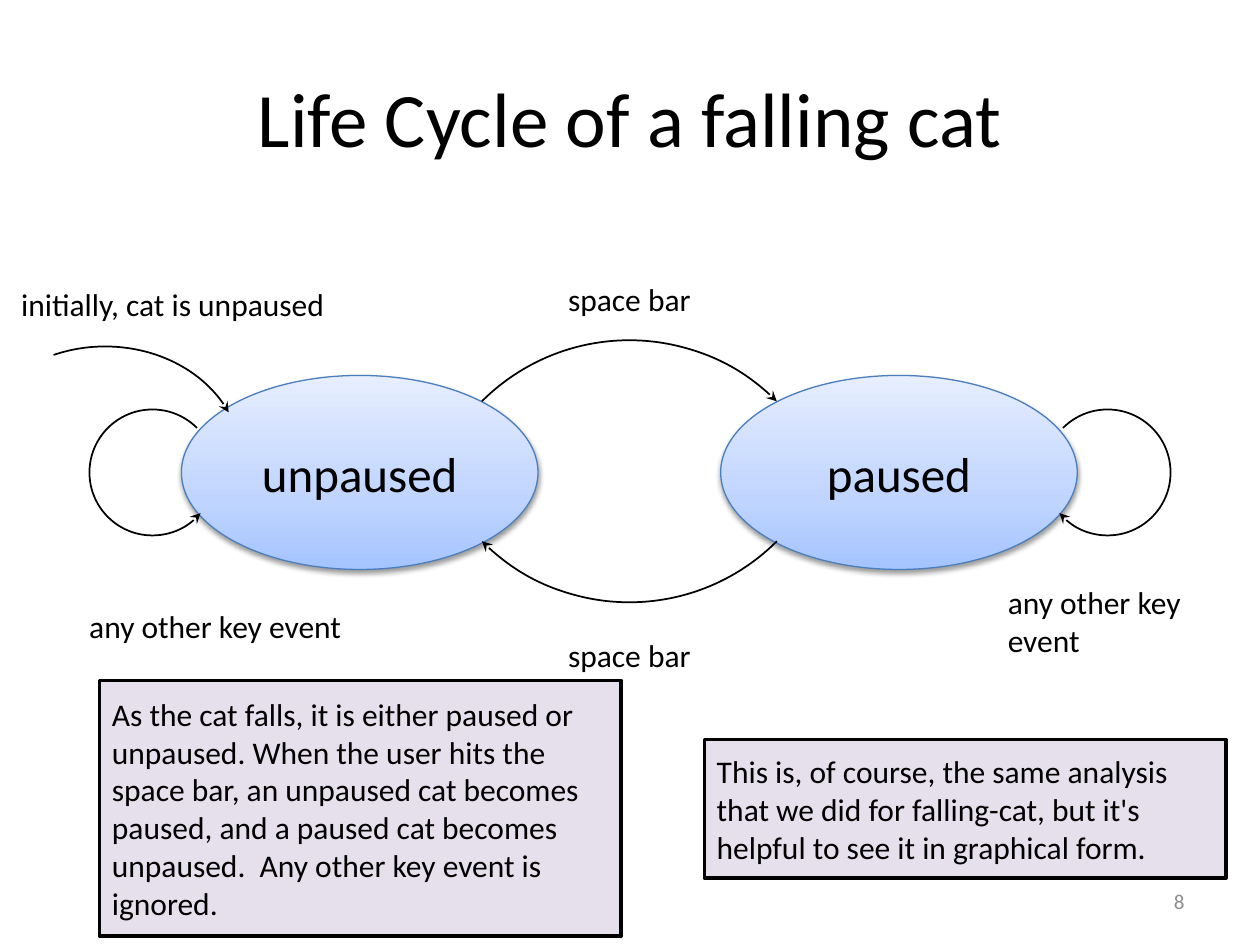
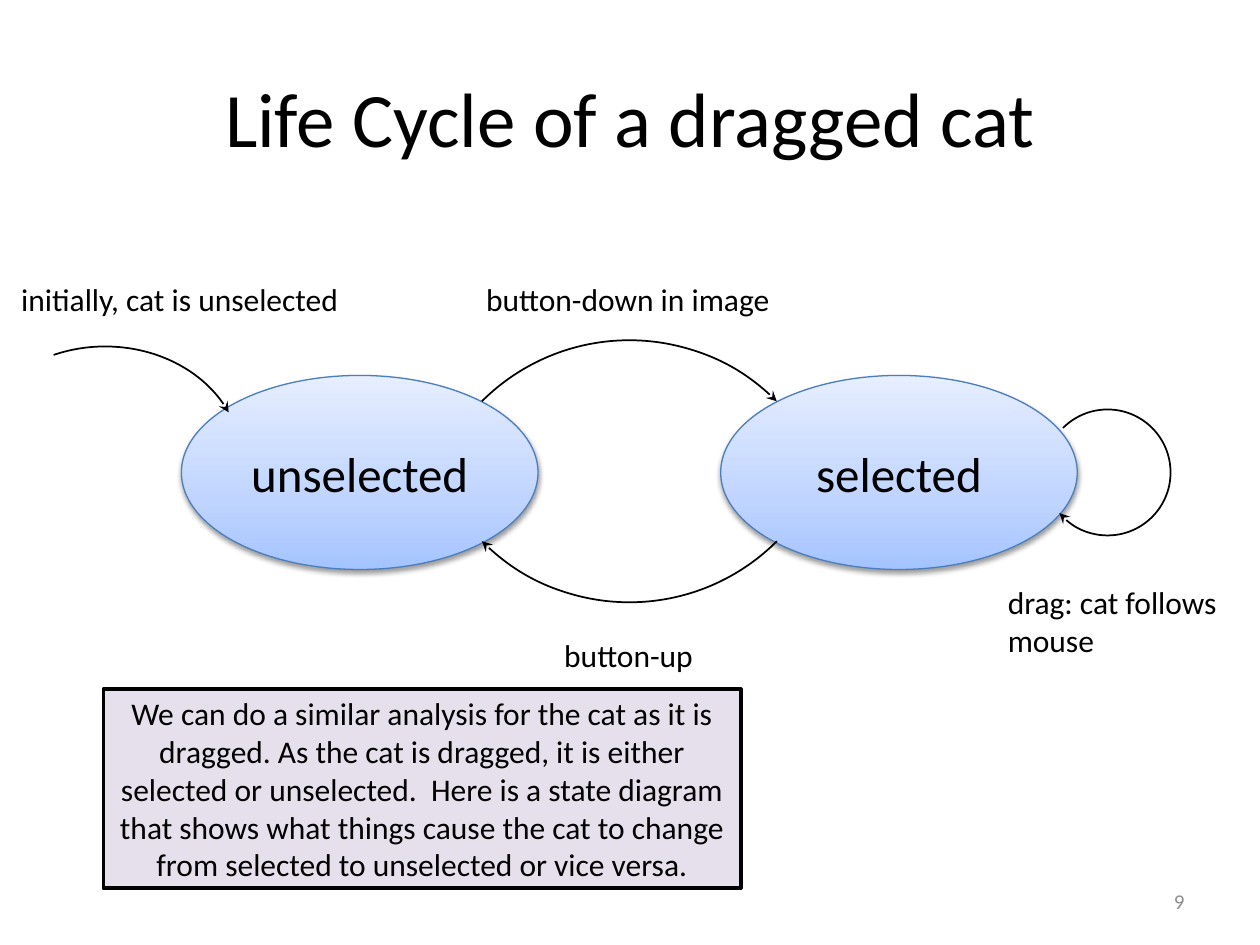
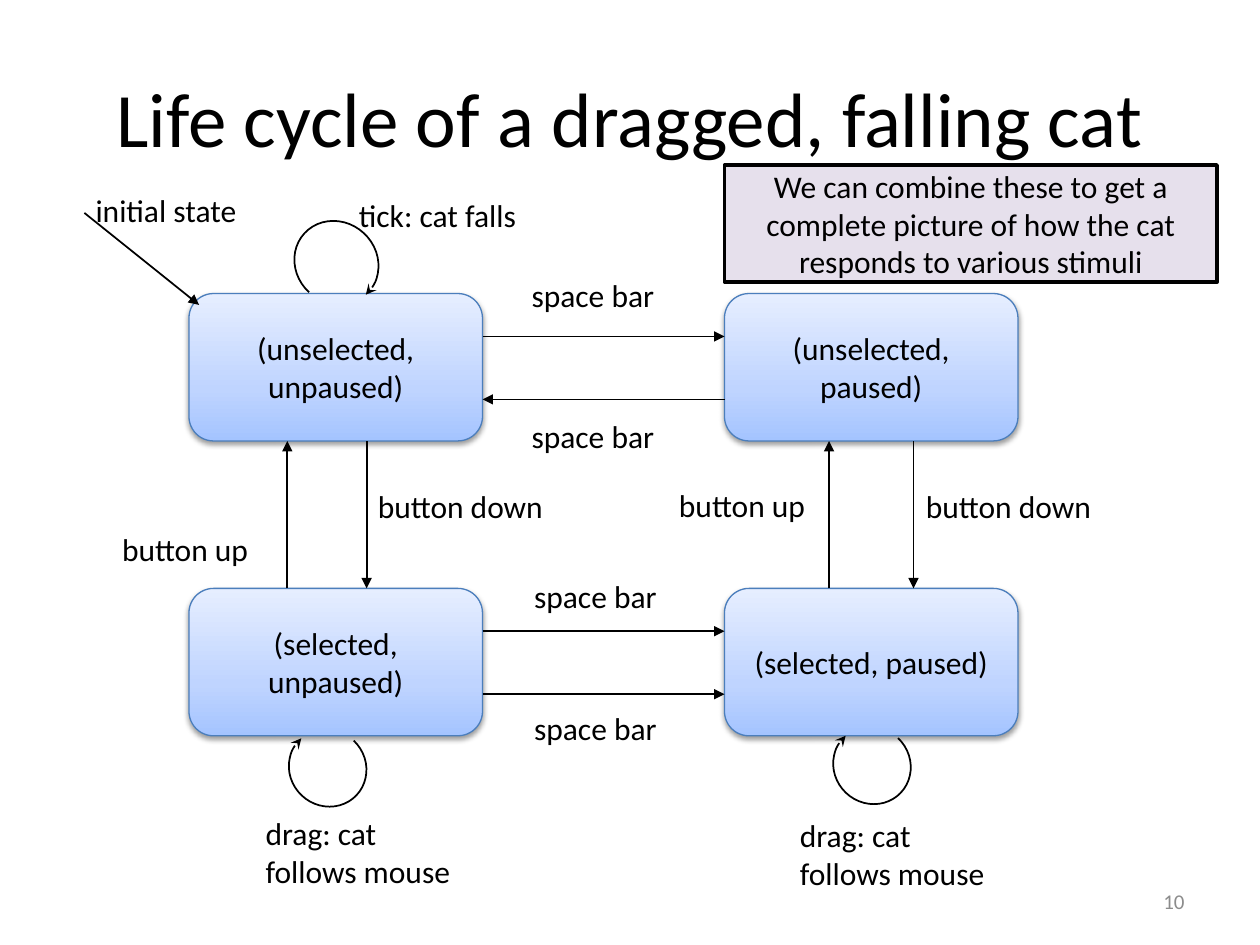
"""Build three slides of state diagrams for a falling and dragged cat."""
from copy import deepcopy

from lxml import etree
from pptx import Presentation
from pptx.dml.color import RGBColor
from pptx.enum.shapes import MSO_CONNECTOR, MSO_SHAPE
from pptx.enum.text import MSO_ANCHOR, PP_ALIGN
from pptx.oxml.ns import qn
from pptx.util import Inches, Pt

LEFT, CENTER, RIGHT = PP_ALIGN.LEFT, PP_ALIGN.CENTER, PP_ALIGN.RIGHT
TOP, MIDDLE = MSO_ANCHOR.TOP, MSO_ANCHOR.MIDDLE
ELLIPSE, ROUNDED = MSO_SHAPE.OVAL, MSO_SHAPE.ROUNDED_RECTANGLE
RECTANGLE, ARC = MSO_SHAPE.RECTANGLE, MSO_SHAPE.ARC
STRAIGHT = MSO_CONNECTOR.STRAIGHT

FONT = "Calibri"
COLORS = {"text": "000000", "number": "8C8C8C", "note": "E6E0EC", "state_line": "4B7EBC"}
STATE_STOPS = [(0, "A4C4FF"), (0.35, "BFD4FF"), (1, "E6EEFF")]
TITLE_AREA = (0.5, 0.3, 9, 1.25)
NUMBER_AREA = (7.17, 6.95, 2.33, 0.4)
LABEL_HEIGHT = 0.4

ENTRY_SWEEP = (244.25, 338.2)
QUARTER_SWEEP = (270, 0)
LOOP_SWEEP = (180, 94.76)

ELLIPSE_AREAS = [(1.44, 2.98, 2.83, 1.54), (5.72, 2.98, 2.83, 1.54)]
CYCLE_ARCS = [
    ((-0.25, 2.75, 2.17, 1.83), ENTRY_SWEEP, 0, False),
    ((3.34, 2.7, 3.31, 3.31), QUARTER_SWEEP, 315, False),
    ((3.34, 1.47, 3.31, 3.31), QUARTER_SWEEP, 135, False),
    ((8.29, 3.25, 1, 1), LOOP_SWEEP, 45, False),
]
LEFT_LOOP = ((0.71, 3.25, 1, 1), LOOP_SWEEP, 315, True)

GRID_LEFTS, GRID_TOPS = (1.5, 5.75), (2.33, 4.67)
GRID_WIDTH, GRID_HEIGHT = 2.33, 1.17
GRID_STATES = [
    ["(unselected, unpaused)", "(unselected, paused)"],
    ["(selected, unpaused)", "(selected, paused)"],
]
GRID_ARCS = [
    ((2.35, 1.74, 0.64, 0.69), LOOP_SWEEP, 312.7, False),
    ((2.3, 5.78, 0.6, 0.63), LOOP_SWEEP, 133.6, False),
    ((6.62, 5.76, 0.6, 0.63), LOOP_SWEEP, 133.6, False),
]
ROW_ARROWS = [(0, 0.34, "right"), (0, 0.84, "left"), (1, 0.34, "right"), (1, 0.84, "right")]
COLUMN_ARROWS = [(2.28, "up"), (2.91, "down"), (6.58, "up"), (7.25, "down")]
INITIAL_ARROW = (0.67, 1.69, 1.58, 2.42)

CYCLES = [
    {
        "number": "8",
        "title": "Life Cycle of a falling cat",
        "states": ["unpaused", "paused"],
        "arcs": CYCLE_ARCS + [LEFT_LOOP],
        "tight_labels": [
            ("space bar", 4.41, 2.17, 1.19),
            ("space bar", 4.41, 5, 1.19),
            ("initially, cat is unpaused", 0.07, 2.21, 2.64),
        ],
        "labels": [
            ("any other key event", 7.9, 4.58, 2.1),
            ("any other key event", 0.61, 4.77, 2.56),
        ],
        "notes": [
            ("As the cat falls, it is either paused or unpaused. When the user hits the "
             "space bar, an unpaused cat becomes paused, and a paused cat becomes "
             "unpaused.  Any other key event is ignored.",
             (0.79, 5.4, 4.14, 2.03), LEFT),
            ("This is, of course, the same analysis that we did for falling-cat, but "
             "it's helpful to see it in graphical form.",
             (5.59, 5.87, 4.14, 1.1), LEFT),
        ],
    },
    {
        "number": "9",
        "title": "Life Cycle of a dragged cat",
        "states": ["unselected", "selected"],
        "arcs": CYCLE_ARCS,
        "tight_labels": [
            ("button-down in image", 3.76, 2.17, 2.48),
            ("button-up", 4.38, 5, 1.24),
            ("initially, cat is unselected", 0.07, 2.17, 2.75),
        ],
        "labels": [("drag: cat follows mouse", 7.9, 4.58, 2.1)],
        "notes": [
            ("We can do a similar analysis for the cat as it is dragged. As the cat is "
             "dragged, it is either selected or unselected.  Here is a state diagram "
             "that shows what things cause the cat to change from selected to "
             "unselected or vice versa.",
             (0.82, 5.47, 5.06, 1.58), CENTER),
        ],
    },
]
COMBINED = {
    "number": "10",
    "title": "Life cycle of a dragged, falling cat",
    "labels": [
        ("initial state", 0.66, 1.47, 1.58),
        ("tick: cat falls", 2.75, 1.51, 1.45),
        ("space bar", 4.12, 2.14, 1.35),
        ("space bar", 4.12, 3.26, 1.35),
        ("space bar", 4.14, 4.53, 1.35),
        ("space bar", 4.14, 5.58, 1.35),
        ("button up", 0.87, 4.16, 1.58),
        ("button down", 2.9, 3.82, 1.58),
        ("button up", 5.29, 3.81, 1.58),
        ("button down", 7.25, 3.82, 1.58),
        ("drag: cat follows mouse", 2.01, 6.41, 1.79),
        ("drag: cat follows mouse", 6.25, 6.43, 1.79),
    ],
    "note": ("We can combine these to get a complete picture of how the cat responds "
             "to various stimuli", (5.75, 1.31, 3.91, 0.93), CENTER),
}


def rgb(name):
    return RGBColor.from_string(COLORS[name])


def inches(area):
    return [Inches(value) for value in area]


def write_text(shape, text, size=18, color="text", align=LEFT, anchor=MIDDLE, wrap=True):
    frame = shape.text_frame
    frame.word_wrap = wrap
    frame.vertical_anchor = anchor
    paragraph = frame.paragraphs[0]
    paragraph.alignment = align
    run = paragraph.add_run()
    run.text = text
    run.font.name = FONT
    run.font.size = Pt(size)
    run.font.color.rgb = rgb(color)


def set_line(shape, color="text", width=1, arrowhead=None):
    shape.line.color.rgb = rgb(color)
    shape.line.width = Pt(width)
    if arrowhead:
        line = shape._element.spPr.find(qn("a:ln"))
        etree.SubElement(line, qn("a:tailEnd"), type=arrowhead)


def add_shape(slide, kind, area):
    shape = slide.shapes.add_shape(kind, *inches(area))
    shape.shadow.inherit = False
    return shape


def add_state(slide, kind, area, text, size):
    state = add_shape(slide, kind, area)
    state.fill.gradient()
    state.fill.gradient_angle = 90
    properties = state._element.spPr
    stops = properties.find(qn("a:gradFill")).find(qn("a:gsLst"))
    stops.append(deepcopy(stops[0]))
    for stop, (position, color) in zip(state.fill.gradient_stops, STATE_STOPS):
        stop.position = position
        stop.color.rgb = RGBColor.from_string(color)
    set_line(state, "state_line", 0.75)
    shadow = etree.SubElement(
        properties.find(qn("a:effectLst")), qn("a:outerShdw"), blurRad=str(Pt(3.1)),
        dist=str(Pt(1.6)), dir="5400000", rotWithShape="0")
    shade = etree.SubElement(shadow, qn("a:srgbClr"), val=COLORS["text"])
    etree.SubElement(shade, qn("a:alpha"), val="38000")
    write_text(state, text, size=size, align=CENTER)


def add_arc(slide, area, sweep, rotation, flipped):
    arc = add_shape(slide, ARC, area)
    arc.fill.background()
    for index, degrees in enumerate(sweep):
        arc.adjustments[index] = degrees * 0.6
    arc.rotation = rotation
    if flipped:
        arc._element.spPr.find(qn("a:xfrm")).set("flipH", "1")
    set_line(arc, arrowhead="stealth")


def add_arrow(slide, *ends):
    arrow = slide.shapes.add_connector(STRAIGHT, *inches(ends))
    set_line(arrow, arrowhead="triangle")
    etree.SubElement(arrow._element.spPr, qn("a:effectLst"))


def add_label(slide, text, left, top, width, wrap=True):
    label = slide.shapes.add_textbox(*inches((left, top, width, LABEL_HEIGHT)))
    write_text(label, text, anchor=TOP, wrap=wrap)


def add_note(slide, text, area, align):
    note = add_shape(slide, RECTANGLE, area)
    note.fill.solid()
    note.fill.fore_color.rgb = rgb("note")
    set_line(note, width=2)
    write_text(note, text, align=align)


def start_slide(presentation, content):
    slide = presentation.slides.add_slide(presentation.slide_layouts[5])
    title = slide.shapes.title
    title.left, title.top, title.width, title.height = inches(TITLE_AREA)
    write_text(title, content["title"], size=44, align=CENTER)
    number = slide.shapes.add_textbox(*inches(NUMBER_AREA))
    write_text(number, content["number"], size=12, color="number", align=RIGHT)
    return slide


def build_cycle(presentation, content):
    slide = start_slide(presentation, content)
    for text, area in zip(content["states"], ELLIPSE_AREAS):
        add_state(slide, ELLIPSE, area, text, 28)
    for arc in content["arcs"]:
        add_arc(slide, *arc)
    for label in content["tight_labels"]:
        add_label(slide, *label, wrap=False)
    for label in content["labels"]:
        add_label(slide, *label)
    for note in content["notes"]:
        add_note(slide, *note)


def build_combined(presentation, content):
    slide = start_slide(presentation, content)
    for top, texts in zip(GRID_TOPS, GRID_STATES):
        for left, text in zip(GRID_LEFTS, texts):
            add_state(slide, ROUNDED, (left, top, GRID_WIDTH, GRID_HEIGHT), text, 18)
    start, end = GRID_LEFTS[0] + GRID_WIDTH, GRID_LEFTS[1]
    for row, offset, direction in ROW_ARROWS:
        y = GRID_TOPS[row] + offset
        first, last = (start, end) if direction == "right" else (end, start)
        add_arrow(slide, first, y, last, y)
    upper, lower = GRID_TOPS[0] + GRID_HEIGHT, GRID_TOPS[1]
    for x, direction in COLUMN_ARROWS:
        first, last = (upper, lower) if direction == "down" else (lower, upper)
        add_arrow(slide, x, first, x, last)
    add_arrow(slide, *INITIAL_ARROW)
    for arc in GRID_ARCS:
        add_arc(slide, *arc)
    for label in content["labels"]:
        add_label(slide, *label)
    add_note(slide, *content["note"])


def main():
    presentation = Presentation()
    presentation.slide_width, presentation.slide_height = Inches(10), Inches(7.5)
    for content in CYCLES:
        build_cycle(presentation, content)
    build_combined(presentation, COMBINED)
    presentation.save("out.pptx")


if __name__ == "__main__":
    main()
